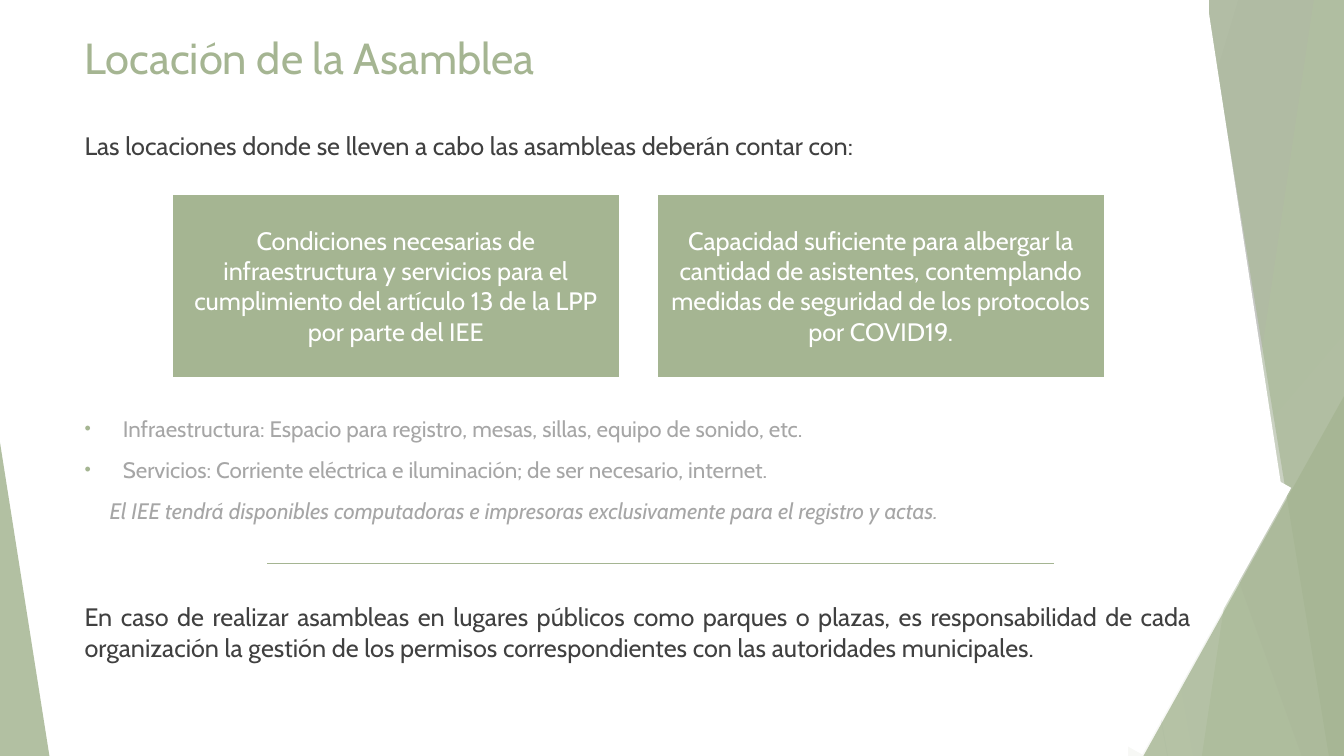
from pptx import Presentation
from pptx import util as u
from pptx.dml.color import RGBColor
from pptx.enum import shapes, text
from pptx.oxml.ns import qn
from lxml import etree

PX = 9144  # 100 px to the inch
WIDTH, HEIGHT = 1333, 750
FONT = "Cabin"
GREEN, WHITE, DARK, GREY = "A5B592", "FFFFFF", "404040", "A6A6A6"
SILVER = "BFBFBF"

TITLE = "Locación de la Asamblea"
INTRO = "Las locaciones donde se lleven a cabo las asambleas deberán contar con:"
REQUIREMENTS = [
    "Condiciones necesarias de infraestructura y servicios para el "
    "cumplimiento del artículo 13 de la LPP por parte del IEE",
    "Capacidad suficiente para albergar la cantidad de asistentes, "
    "contemplando medidas de seguridad de los protocolos por COVID19.",
]
DETAILS = [
    "Infraestructura: Espacio para registro, mesas, sillas, equipo de sonido, etc.",
    "Servicios: Corriente eléctrica e iluminación; de ser necesario, internet.",
]
EQUIPMENT = ("El IEE tendrá disponibles computadoras e impresoras "
             "exclusivamente para el registro y actas.")
PERMITS = ("En caso de realizar asambleas en lugares públicos como parques o plazas, "
           "es responsabilidad de cada organización la gestión de los permisos "
           "correspondientes con las autoridades municipales.")

# from, to, colour, points
BACK_LINES = [
    ((1025, 0), (1158, 750), SILVER, 0.75),
    ((1333, 403), (812, 750), "D9D9D9", 0.75),
]
DIVIDER = ((265, 559), (1045, 559), GREEN, 1)
# Bands run to the right edge: (top left x, bottom left x), colour, opacity.
# Triangles: (left, top, width, height, apex), colour, opacity.
FACETS = [
    ("band", (1228, 1004), GREEN, 30),
    ("band", (1050, 1183), GREEN, 20),
    ("triangle", (977, 333, 356, 417, 1), WHITE, 72),
    ("band", (1021, 1291), SILVER, 70),
    ("band", (1303, 1192), "C9D3BE", 70),
    ("band", (1196, 1318), GREEN, 65),
    ("triangle", (1134, 393, 199, 357, 1), GREEN, 80),
    ("triangle", (0, 439, 49, 311, 0), GREEN, 85),
]
# left, top, width, height, rotation
MASKS = [
    (1028, 14, 208, 497, 351.3),
    (1012, 414, 208, 303, 29.2),
    (991, 0, 208, 48, 0),
    (798, 643, 321, 107, 0),
]
MARGIN, TEXT_WIDTH = 74, 1117
BOX_LEFT, BOX_TOP, BOX_WIDTH, BOX_HEIGHT, BOX_GAP = 170, 192, 445, 183, 36

prs = Presentation()
prs.slide_width, prs.slide_height = WIDTH * PX, HEIGHT * PX
slide = prs.slides.add_slide(prs.slide_layouts[6])


def emu(*lengths):
    return [length * PX for length in lengths]


def rgb(code):
    return RGBColor.from_string(code)


def paint(shape, colour, opacity=100):
    """Flat fill without outline or shadow."""
    shape.shadow.inherit = False
    shape.fill.solid()
    shape.fill.fore_color.rgb = rgb(colour)
    shape.line.fill.background()
    if opacity < 100:
        fill = shape.fill._xPr.find(qn("a:solidFill"))
        etree.SubElement(fill[0], qn("a:alpha"), val=str(opacity * 1000))


def add_rect(left, top, width, height):
    rect = slide.shapes.add_shape(shapes.MSO_SHAPE.RECTANGLE, *emu(left, top, width, height))
    paint(rect, WHITE)
    return rect


def add_line(start, end, colour, points):
    line = slide.shapes.add_connector(shapes.MSO_CONNECTOR.STRAIGHT, *emu(*start, *end))
    line.line.color.rgb = rgb(colour)
    line.line.width = u.Pt(points)
    etree.SubElement(line._element.spPr, qn("a:effectLst"))


def add_band(top_x, bottom_x):
    builder = slide.shapes.build_freeform(top_x, 0, scale=PX)
    builder.add_line_segments([(WIDTH, 0), (WIDTH, HEIGHT), (bottom_x, HEIGHT)])
    return builder.convert_to_shape()


def add_triangle(left, top, width, height, apex):
    triangle = slide.shapes.add_shape(
        shapes.MSO_SHAPE.ISOSCELES_TRIANGLE, *emu(left, top, width, height))
    triangle.adjustments[0] = apex
    return triangle


def write(paragraph, words, size, colour, align=text.PP_ALIGN.JUSTIFY):
    paragraph.text = words
    paragraph.alignment = align
    font = paragraph.font
    font.name, font.size, font.color.rgb = FONT, u.Pt(size), rgb(colour)


def add_text(top, width, height, words, size, colour, align=text.PP_ALIGN.JUSTIFY):
    frame = slide.shapes.add_textbox(*emu(MARGIN, top, width, height)).text_frame
    frame.word_wrap = True
    write(frame.paragraphs[0], words, size, colour, align)
    return frame


def indent(paragraph, margin, first=0):
    props = paragraph._p.get_or_add_pPr()
    props.set("marL", str(margin * PX))
    props.set("indent", str(first * PX))
    return props


def add_bullet(paragraph):
    props = indent(paragraph, 38, -38)
    bullet_colour = etree.Element(qn("a:buClr"))
    etree.SubElement(bullet_colour, qn("a:srgbClr"), val=GREEN)
    bullet = [
        bullet_colour,
        etree.Element(qn("a:buSzPct"), val="80000"),
        etree.Element(qn("a:buFont"), typeface="Arial"),
        etree.Element(qn("a:buChar"), char="•"),
    ]
    defaults = props.find(qn("a:defRPr"))
    for part in bullet:
        defaults.addprevious(part)


for back_line in BACK_LINES:
    add_line(*back_line)
for kind, outline, colour, opacity in FACETS:
    add_facet = add_band if kind == "band" else add_triangle
    paint(add_facet(*outline), colour, opacity)
for *place, rotation in MASKS:
    add_rect(*place).rotation = rotation

add_text(26, 940, 72, TITLE, 31, GREEN, text.PP_ALIGN.LEFT)
add_text(124, TEXT_WIDTH, 50, INTRO, 18, DARK)

for column, requirement in enumerate(REQUIREMENTS):
    left = BOX_LEFT + column * (BOX_WIDTH + BOX_GAP)
    box = add_rect(left, BOX_TOP, BOX_WIDTH, BOX_HEIGHT)
    paint(box, GREEN)
    box.line.color.rgb = rgb(WHITE)
    box.line.width = u.Pt(2)
    box.text_frame.word_wrap = True
    box.text_frame.vertical_anchor = text.MSO_ANCHOR.MIDDLE
    write(box.text_frame.paragraphs[0], requirement, 18, WHITE, text.PP_ALIGN.CENTER)

add_text(592, TEXT_WIDTH, 100, PERMITS, 18, DARK)
add_line(*DIVIDER)

details = add_text(407, TEXT_WIDTH, 140, DETAILS[0], 16, GREY)
for detail in DETAILS[1:]:
    write(details.add_paragraph(), detail, 16, GREY)
for paragraph in details.paragraphs:
    add_bullet(paragraph)
equipment = details.add_paragraph()
write(equipment, EQUIPMENT, 16, GREY, text.PP_ALIGN.LEFT)
equipment.font.italic = True
indent(equipment, 25)
for paragraph in details.paragraphs:
    paragraph.space_before = u.Pt(10)

prs.save("out.pptx")
